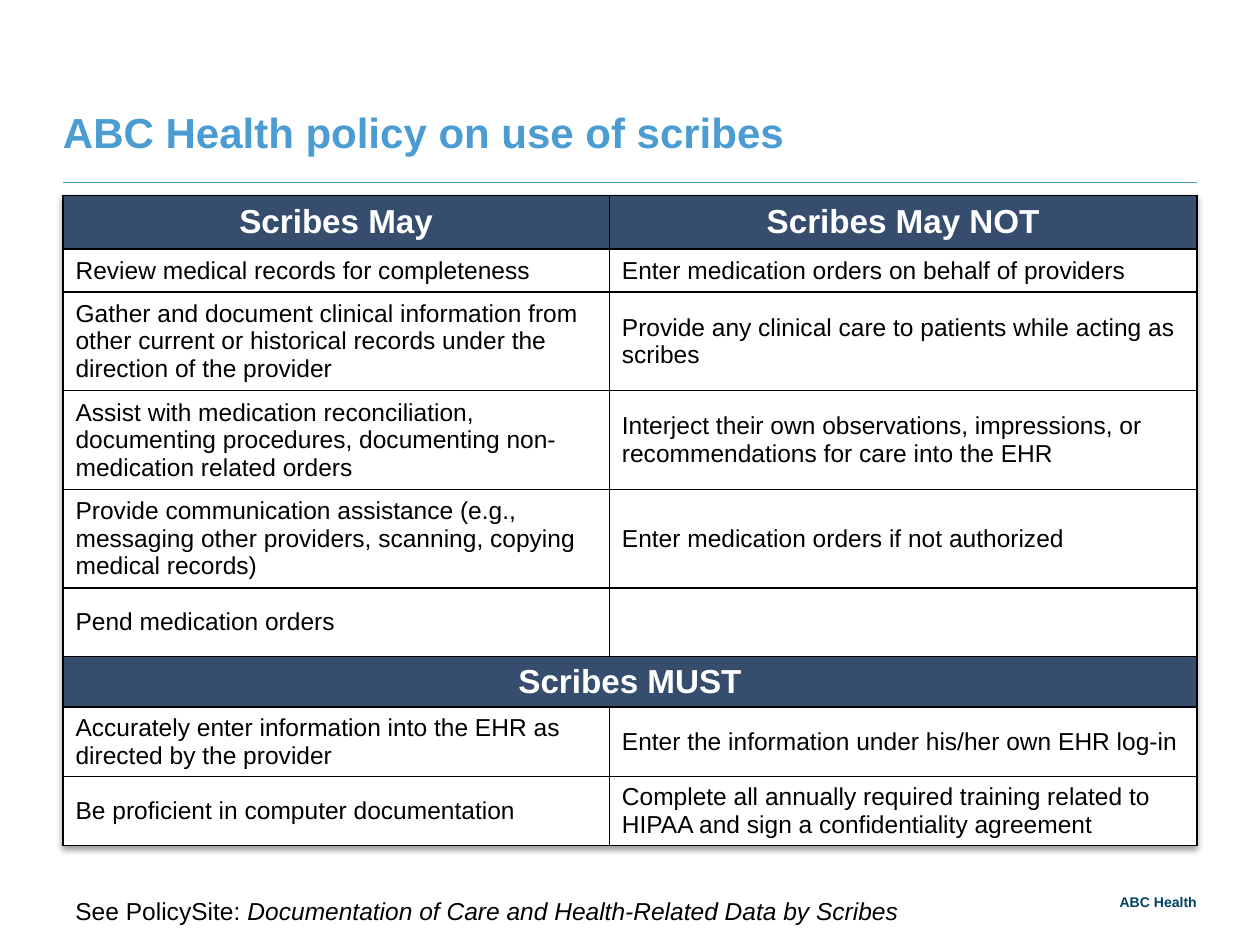
from lxml.etree import SubElement
from pptx import Presentation
from pptx.dml.color import RGBColor
from pptx.enum.shapes import MSO_CONNECTOR
from pptx.enum.text import MSO_ANCHOR, PP_ALIGN
from pptx.oxml import parse_xml
from pptx.oxml.ns import nsdecls, qn
from pptx.util import Pt

FONT = "Arial"
COLORS = {"title": "4B9CD3", "head": "364D6E", "brand": "004163",
          "ink": "000000", "paper": "FFFFFF"}
COLS = [312.2, 335.8]
HEIGHTS = [30.7, 24.6, 54.8, 54.8, 54.8, 39.2, 28.6, 39, 39]
HEADS = (0, 6)
ROWS = [
    ("Scribes May", "Scribes May NOT"),
    ("Review medical records for completeness",
     "Enter medication orders on behalf of providers"),
    ("Gather and document clinical information from other current or "
     "historical records under the direction of the provider",
     "Provide any clinical care to patients while acting as scribes"),
    ("Assist with medication reconciliation, documenting procedures, "
     "documenting non-medication related orders",
     "Interject their own observations, impressions, or recommendations "
     "for care into the EHR"),
    ("Provide communication assistance (e.g., messaging other providers, "
     "scanning, copying medical records)",
     "Enter medication orders if not authorized"),
    ("Pend medication orders", ""),
    ("Scribes MUST",),
    ("Accurately enter information into the EHR as directed by the provider",
     "Enter the information under his/her own EHR log-in"),
    ("Be proficient in computer documentation",
     "Complete all annually required training related to HIPAA and sign a "
     "confidentiality agreement"),
]


def rgb(name):
    return RGBColor.from_string(COLORS[name])


def add_run(par, text, size, color, bold=False, italic=False):
    run = par.add_run()
    run.text = text
    font = run.font
    font.name, font.size = FONT, Pt(size)
    font.bold, font.italic = bold, italic
    font.color.rgb = rgb(color)


def add_box(slide, box, inset=(0, 0), anchor=MSO_ANCHOR.BOTTOM):
    """Add a text box and return its first paragraph."""
    frame = slide.shapes.add_textbox(*map(Pt, box)).text_frame
    frame.word_wrap = True
    frame.vertical_anchor = anchor
    frame.margin_left = frame.margin_right = Pt(inset[0])
    frame.margin_top = frame.margin_bottom = Pt(inset[1])
    return frame.paragraphs[0]


def add_title(slide, box):
    """Place the heading, with its rule along the foot of the box."""
    left, top, width, height = box
    par = add_box(slide, (left, top, width, height - 14.7))
    par.line_spacing = Pt(28)
    add_run(par, "ABC Health policy on use of scribes", 24, "title", True)
    foot = top + height
    rule = slide.shapes.add_connector(
        MSO_CONNECTOR.STRAIGHT, Pt(left), Pt(foot), Pt(left + width), Pt(foot))
    rule.line.color.rgb = rgb("title")
    rule.line.width = Pt(0.5)
    SubElement(rule._element.spPr, qn("a:effectLst"))


def add_borders(cell):
    props = cell._tc.get_or_add_tcPr()
    for spot, side in enumerate(("lnL", "lnR", "lnT", "lnB")):
        props.insert(spot, parse_xml(
            f'<a:{side} {nsdecls("a")} w="12700"><a:solidFill>'
            f'<a:srgbClr val="{COLORS["ink"]}"/></a:solidFill></a:{side}>'))


def add_shadow(table):
    table._tbl.tblPr.insert(0, parse_xml(
        f'<a:effectLst {nsdecls("a")}><a:outerShdw blurRad="50800" '
        'dist="25400" dir="5400000" algn="t" rotWithShape="0">'
        f'<a:srgbClr val="{COLORS["ink"]}"><a:alpha val="40000"/>'
        '</a:srgbClr></a:outerShdw></a:effectLst>'))


def fill_cell(cell, text, head):
    cell.fill.solid()
    cell.fill.fore_color.rgb = rgb("head" if head else "paper")
    cell.vertical_anchor = MSO_ANCHOR.MIDDLE
    cell.margin_left = cell.margin_right = Pt(7.2)
    cell.margin_top = cell.margin_bottom = Pt(3)
    add_borders(cell)
    par = cell.text_frame.paragraphs[0]
    par.alignment = PP_ALIGN.CENTER if head else PP_ALIGN.LEFT
    if text:
        add_run(par, text, 19 if head else 14,
                "paper" if head else "ink", head)


def add_rules(slide, left, top):
    """Place the table of what scribes may, may not and must do."""
    table = slide.shapes.add_table(
        len(ROWS), len(COLS), Pt(left), Pt(top),
        Pt(sum(COLS)), Pt(sum(HEIGHTS))).table
    table.horz_banding = False
    add_shadow(table)
    for col, width in zip(table.columns, COLS):
        col.width = Pt(width)
    for r, (texts, height) in enumerate(zip(ROWS, HEIGHTS)):
        table.rows[r].height = Pt(height)
        if len(texts) == 1:
            table.cell(r, 0).merge(table.cell(r, 1))
        for c in range(len(COLS)):
            text = texts[c] if c < len(texts) else ""
            fill_cell(table.cell(r, c), text, r in HEADS)


def add_footer(slide, box):
    left, top, width, height = box
    par = add_box(slide, (left, top + 4.3, 599, height - 4.3),
                  (7.2, 3.6), MSO_ANCHOR.TOP)
    add_run(par, "See PolicySite: ", 14, "ink")
    add_run(par, "Documentation of Care and Health-Related Data by Scribes",
            14, "ink", italic=True)
    par = add_box(slide, (left + width - 88.5, top, 88.5, 16.2))
    par.alignment = PP_ALIGN.RIGHT
    add_run(par, "ABC Health", 8, "brand", True)


def main():
    deck = Presentation()
    deck.slide_width, deck.slide_height = Pt(720), Pt(540)
    slide = deck.slides.add_slide(deck.slide_layouts[6])
    add_title(slide, (36, 27, 648, 77.4))
    add_rules(slide, 36, 111.6)
    add_footer(slide, (36, 504, 648, 28.5))
    deck.save("out.pptx")


if __name__ == "__main__":
    main()
